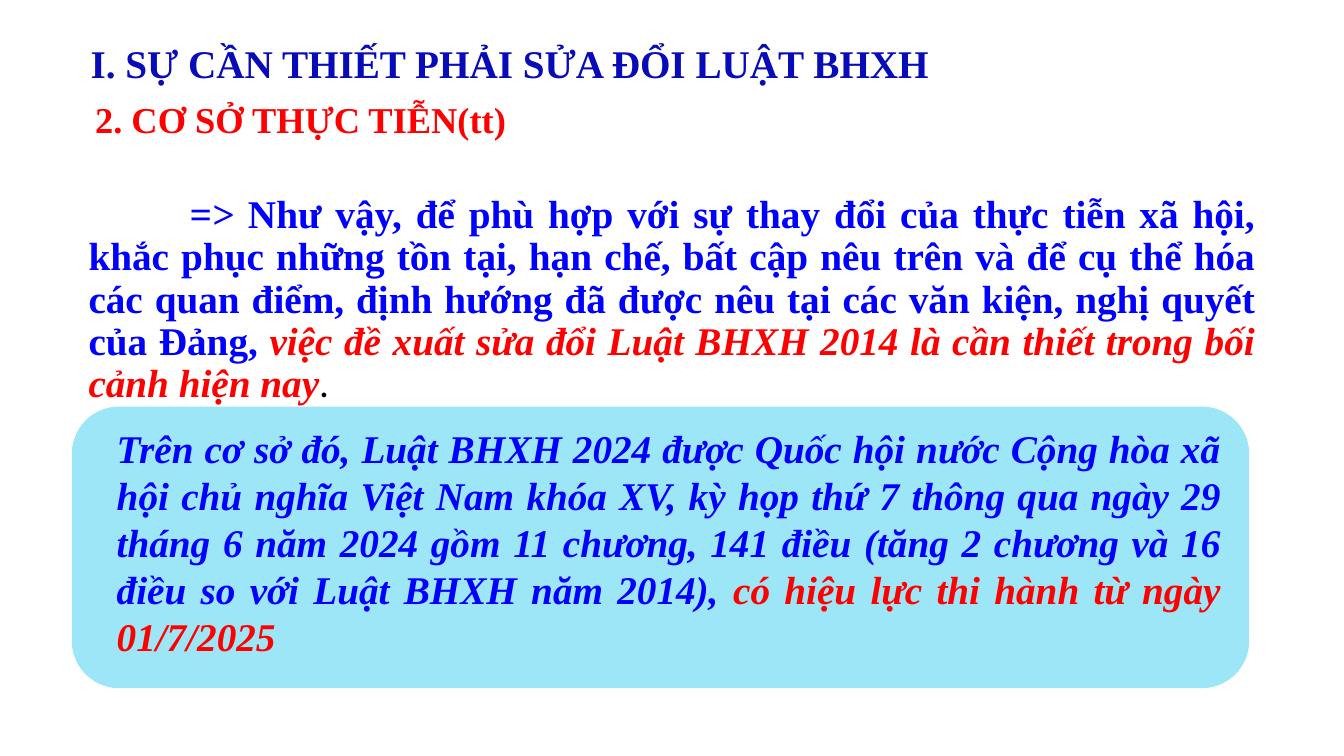
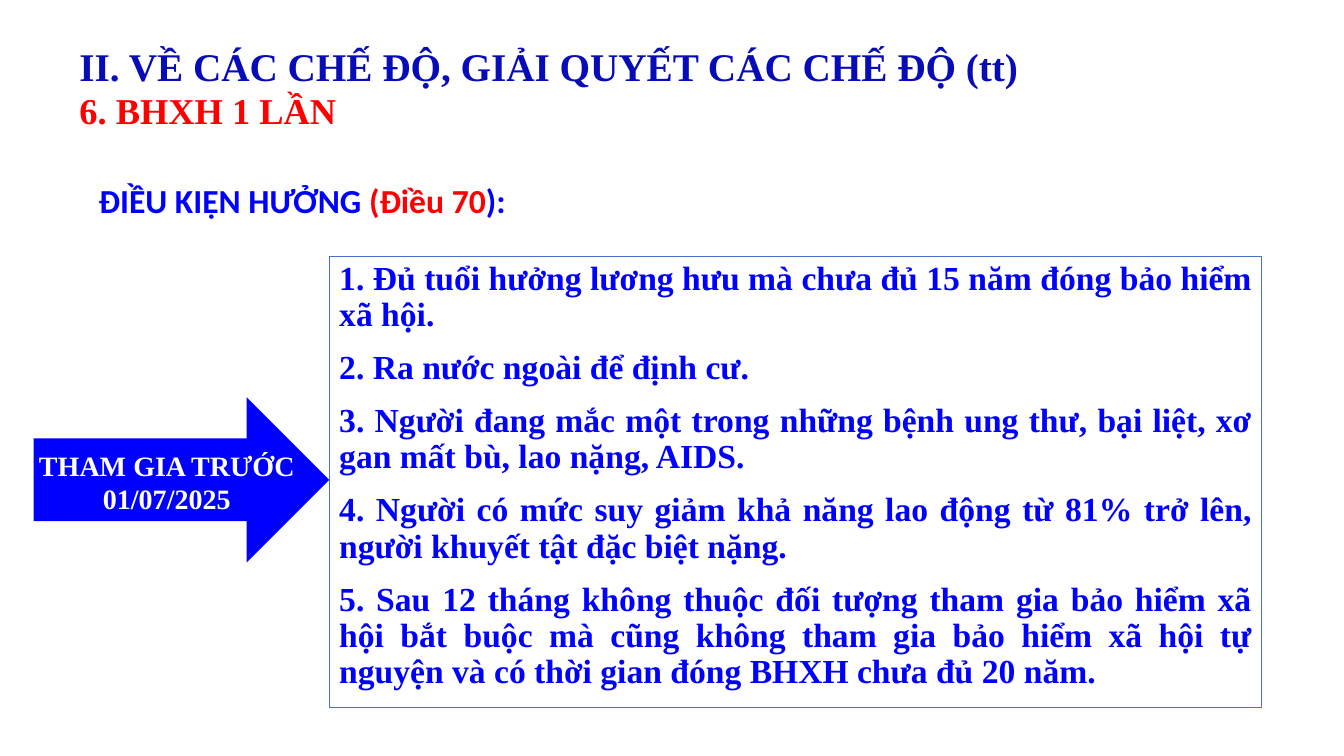
from dataclasses import dataclass

from pptx import Presentation
from pptx.dml.color import RGBColor as RGB
from pptx.enum.shapes import MSO_SHAPE as SHAPE
from pptx.enum.text import MSO_ANCHOR as ANCHOR, PP_ALIGN as ALIGN
from pptx.util import Inches, Pt


@dataclass(frozen=True)
class Theme:
    navy: RGB = RGB(0x08, 0x0C, 0xB8)
    blue: RGB = RGB(0x00, 0x00, 0xFF)
    red: RGB = RGB(0xFF, 0x00, 0x00)
    sky: RGB = RGB(0x9C, 0xE6, 0xF8)
    edge: RGB = RGB(0x44, 0x72, 0xC4)
    white: RGB = RGB(0xFF, 0xFF, 0xFF)
    black: RGB = RGB(0x00, 0x00, 0x00)
    serif: str = "Times New Roman"
    sans: str = "Calibri"
    title: int = 28
    subtitle: int = 26
    body: int = 24
    label: int = 20


T = Theme()
prs = Presentation()
prs.slide_width, prs.slide_height = Inches(13.33), Inches(7.5)
COL, ROW = prs.slide_width / 40, prs.slide_height / 30


def add_box(s, cells, shape=None, fill=None, line=None, width=1):
    """Place a text box or a preset shape; cells = column, row, columns, rows."""
    at = [round(n * unit) for n, unit in zip(cells, (COL, ROW, COL, ROW))]
    if shape is None:
        sp = s.shapes.add_textbox(*at)
    else:
        sp = s.shapes.add_shape(shape, *at)
        sp.shadow.inherit = False
        if fill is None:
            sp.fill.background()
        else:
            sp.fill.solid()
            sp.fill.fore_color.rgb = fill
        if line is None:
            sp.line.fill.background()
        else:
            sp.line.color.rgb = line
            sp.line.width = Pt(width)
    sp.text_frame.word_wrap = True
    sp.text_frame.vertical_anchor = ANCHOR.TOP
    return sp


def write(sp, paras, size, color, align=ALIGN.LEFT, font=T.serif,
          spacing=1.0, gap=0, italic=False):
    """Fill a box; each paragraph is a list of (text, own run colour or None)."""
    tf = sp.text_frame
    for i, runs in enumerate(paras):
        p = tf.paragraphs[0] if i == 0 else tf.add_paragraph()
        p.alignment, p.line_spacing = align, spacing
        if i:
            p.space_before = Pt(gap)
        p.font.name, p.font.size = font, Pt(size)
        p.font.bold, p.font.italic = True, italic
        p.font.color.rgb = color
        for text, own in runs:
            r = p.add_run()
            r.text = text
            if own is not None:
                r.font.color.rgb = own
    return tf


# Both slides: heading and red subheading
headings = [
    ("I. SỰ CẦN THIẾT PHẢI SỬA ĐỔI LUẬT BHXH", (2.19, 1.36, 25.95, 2.28),
     "2. CƠ SỞ THỰC TIỄN(tt)", (2.16, 3.64, 13.59, 2.16), ALIGN.CENTER),
    ("II. VỀ CÁC CHẾ ĐỘ, GIẢI QUYẾT CÁC CHẾ ĐỘ (tt)", (2.07, 1.48, 28.65, 2.28),
     "6. BHXH 1 LẦN", (2.07, 3.32, 9.09, 2.16), ALIGN.LEFT),
]
slides = []
for title, title_at, subtitle, subtitle_at, align in headings:
    s = prs.slides.add_slide(prs.slide_layouts[6])
    sp = add_box(s, title_at, SHAPE.RECTANGLE, T.white)
    write(sp, [[(title, None)]], T.title, T.navy, align)
    write(add_box(s, subtitle_at), [[(subtitle, None)]], T.subtitle, T.red, align)
    slides.append(s)
reasons, lump_sum = slides

# Slide 1: conclusion with an indented first line
tf = write(add_box(reasons, (2.34, 7.52, 35.31, 22.48)), [[
    ("=> ", None),
    ("Như vậy, để phù hợp với sự thay đổi của thực tiễn xã hội, khắc phục những "
     "tồn tại, hạn chế, bất cập nêu trên và để cụ thể hóa các quan điểm, định hướng "
     "đã được nêu tại các văn kiện, nghị quyết của Đảng, ", None),
    ("việc đề xuất sửa đổi Luật BHXH 2014 là cần thiết trong bối cảnh hiện nay", T.red),
    (".", T.black),
]], T.title, T.blue, ALIGN.JUSTIFY, spacing=0.9)
p = tf.paragraphs[0]
p._p.get_or_add_pPr().set("indent", str(Inches(1)))
arrow_sign, _, proposal, full_stop = p.runs
arrow_sign.font.italic = proposal.font.italic = True
full_stop.font.name, full_stop.font.bold = T.sans, False

# Slide 1: highlighted panel on the new law
add_box(reasons, (2.16, 16.16, 35, 11.12), SHAPE.ROUNDED_RECTANGLE, T.sky, T.sky)
write(add_box(reasons, (3.18, 16.64, 33.45, 9.84)), [[
    ("Trên cơ sở đó, Luật BHXH 2024 được Quốc hội nước Cộng hòa xã hội chủ nghĩa "
     "Việt Nam khóa XV, kỳ họp thứ 7 thông qua ngày 29 tháng 6 năm 2024 gồm "
     "11 chương, 141 điều (tăng 2 chương và 16 điều so với Luật BHXH năm 2014), ", None),
    ("có hiệu lực thi hành từ ngày 01/7/2025", T.red),
]], T.title, T.blue, ALIGN.JUSTIFY, italic=True)

# Slide 2: condition line and arrow label
add_box(lump_sum, (1, 15.76, 8.8, 6.56), SHAPE.RIGHT_ARROW, T.blue)
condition = [("ĐIỀU KIỆN HƯỞNG ", None), ("(Điều 70", T.red), ("):", None)]
joined = [("THAM GIA TRƯỚC 01/07/2025", None)]
for cells, runs, size, color, align, font, spacing in [
    ((2.64, 6.36, 14.58, 3.36), condition, T.body, T.blue, ALIGN.LEFT, T.sans, 0.9),
    ((0, 17.56, 9.93, 3.12), joined, T.label, T.white, ALIGN.CENTER, T.serif, 1.0),
]:
    tf = write(add_box(lump_sum, cells), [runs], size, color, align, font, spacing)
    tf.vertical_anchor = ANCHOR.MIDDLE
    tf.margin_top = tf.margin_bottom = Inches(0.1)

# Slide 2: framed list of cases
cases = [
    "1. Đủ tuổi hưởng lương hưu mà chưa đủ 15 năm đóng bảo hiểm xã hội.",
    "2. Ra nước ngoài để định cư.",
    "3. Người đang mắc một trong những bệnh ung thư, bại liệt, xơ gan mất bù, "
    "lao nặng, AIDS.",
    "4. Người có mức suy giảm khả năng lao động từ 81% trở lên, người khuyết tật "
    "đặc biệt nặng.",
    "5. Sau 12 tháng không thuộc đối tượng tham gia bảo hiểm xã hội bắt buộc mà "
    "cũng không tham gia bảo hiểm xã hội tự nguyện và có thời gian đóng BHXH "
    "chưa đủ 20 năm.",
]
frame = add_box(lump_sum, (9.8, 10.16, 27.75, 17.92), SHAPE.RECTANGLE,
                line=T.edge, width=0.75)
write(frame, [[(case, None)] for case in cases], T.body, T.blue, ALIGN.JUSTIFY,
      spacing=0.9, gap=12)

prs.save("out.pptx")
